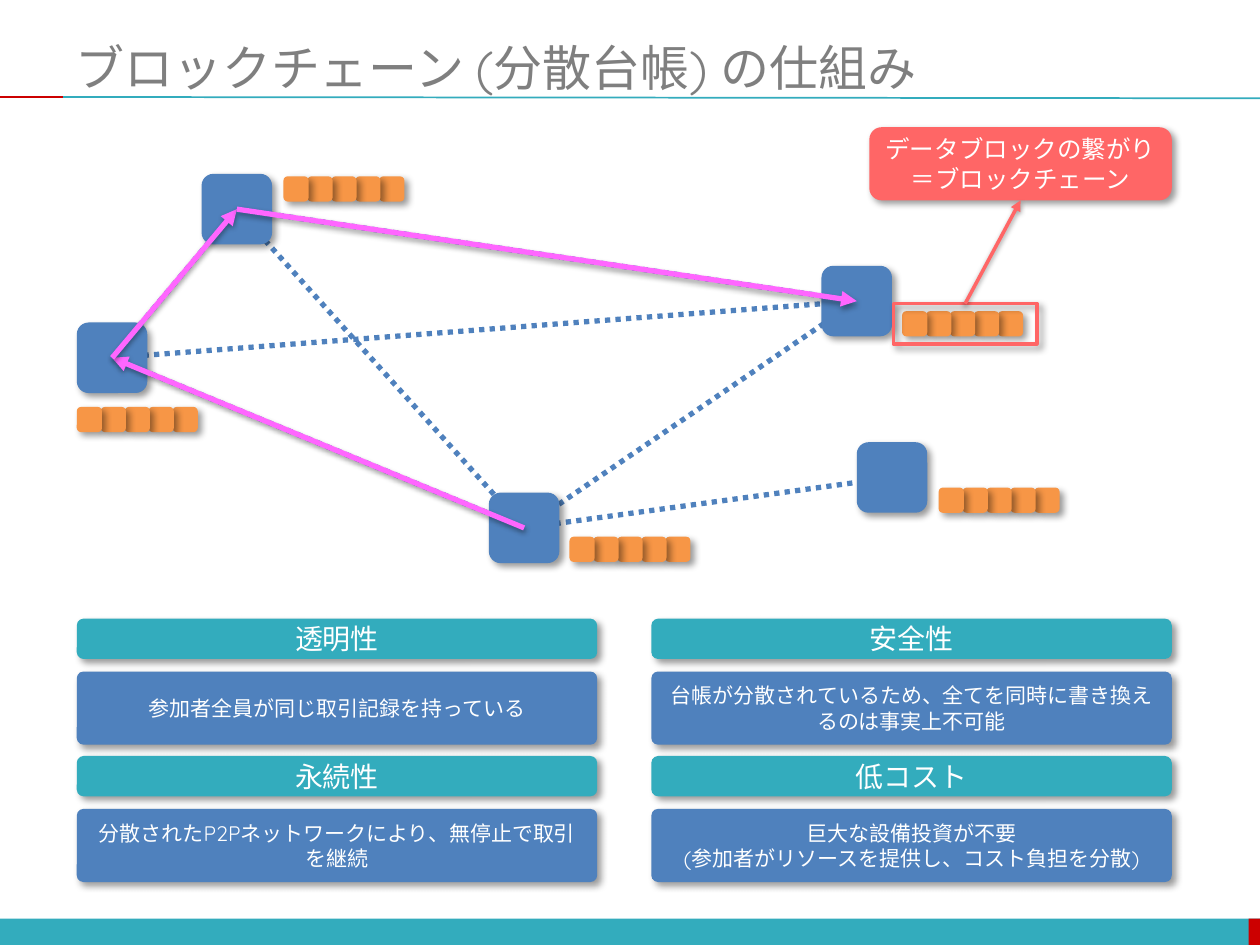
from lxml import etree
from pptx import Presentation
from pptx import util as u
from pptx.dml.color import RGBColor
from pptx.enum import dml, shapes, text
from pptx.oxml import ns

TEAL = RGBColor(0x33, 0xAC, 0xBD)
RED = RGBColor(0xCC, 0x00, 0x00)
BLUE = RGBColor(0x4F, 0x81, 0xBD)
ORANGE = RGBColor(0xF7, 0x96, 0x46)
PINK = RGBColor(0xFF, 0x66, 0xFF)
CORAL = RGBColor(0xFF, 0x66, 0x66)
GREY = RGBColor(0x7F, 0x7F, 0x7F)
WHITE = RGBColor(0xFF, 0xFF, 0xFF)

FONT = "Quicksand"
WIDTH, HEIGHT = 10, 7.5
NODE = 0.56
BLOCK, BLOCK_STEP, BLOCKS = 0.2, 0.19, 5
BOX_SHADOW = (40, 4, 3, 45)  # opacity %, blur pt, distance pt, angle
ARROW_SHADOW = (38, 3.1, 1.6, 90)

# Top-left corner of each node and of its chain of blocks
NODES = {
    "top": ((1.6, 1.38), (2.25, 1.4)),
    "left": ((0.61, 2.56), (0.61, 3.23)),
    "bottom": ((3.88, 3.91), (4.52, 4.26)),
    "right": ((6.52, 2.11), (7.16, 2.47)),
    "far": ((6.8, 3.51), (7.45, 3.87)),
}
LINKS = [("top", "right"), ("top", "left"), ("top", "bottom"), ("left", "bottom"),
         ("left", "right"), ("bottom", "right"), ("bottom", "far")]
ROUTE = ["bottom", "left", "top", "right"]

# Benefit cards, two columns by two rows
CARD_X, CARD_Y, CARD_W = 0.61, 4.91, 4.13
COLUMN_STEP, ROW_STEP = 4.56, 1.09
HEADER_H, BODY_TOP, BODY_H = 0.32, 0.42, 0.58
BENEFITS = [
    [("透明性", "参加者全員が同じ取引記録を持っている"),
     ("安全性", "台帳が分散されているため、全てを同時に書き換えるのは事実上不可能")],
    [("永続性", "分散されたP2Pネットワークにより、無停止で取引を継続"),
     ("低コスト", "巨大な設備投資が不要\n(参加者がリソースを提供し、コスト負担を分散)")],
]


def set_shadow(shape, shadow=None):
    """Give an explicit effect list, empty when there is no shadow."""
    effects = etree.SubElement(shape._element.spPr, ns.qn("a:effectLst"))
    if shadow:
        opacity, blur, distance, angle = shadow
        outer = etree.SubElement(
            effects, ns.qn("a:outerShdw"), blurRad=str(u.Pt(blur)),
            dist=str(u.Pt(distance)), dir=str(angle * 60000), rotWithShape="0")
        color = etree.SubElement(outer, ns.qn("a:srgbClr"), val="000000")
        etree.SubElement(color, ns.qn("a:alpha"), val=str(opacity * 1000))


def write(shape, words, size, color, align):
    frame = shape.text_frame
    frame.text = words
    frame.word_wrap = True
    frame.vertical_anchor = text.MSO_ANCHOR.MIDDLE
    for paragraph in frame.paragraphs:
        paragraph.alignment = align
        for run in paragraph.runs:
            run.font.size = u.Pt(size)
            run.font.name = FONT
            run.font.color.rgb = color


def add_box(slide, left, top, width, height, fill=None, outline=None,
            rounded=True, corner=None, shadow=BOX_SHADOW, words=None, size=None):
    kind = shapes.MSO_SHAPE.ROUNDED_RECTANGLE if rounded else shapes.MSO_SHAPE.RECTANGLE
    box = slide.shapes.add_shape(kind, *map(u.Inches, (left, top, width, height)))
    if corner is not None:
        box.adjustments[0] = corner
    if fill is not None:
        box.fill.solid()
        box.fill.fore_color.rgb = fill
    else:
        box.fill.background()
    if outline is not None:
        box.line.color.rgb = outline
        box.line.width = u.Pt(2)
    else:
        box.line.fill.background()
    set_shadow(box, shadow)
    if words:
        write(box, words, size, WHITE, text.PP_ALIGN.CENTER)
    return box


def add_line(slide, start, end, color, width, dotted=False, arrow=False):
    line = slide.shapes.add_connector(
        shapes.MSO_CONNECTOR.STRAIGHT, *map(u.Inches, (*start, *end)))
    line.line.color.rgb = color
    line.line.width = u.Pt(width)
    if dotted:
        line.line.dash_style = dml.MSO_LINE.ROUND_DOT
    if arrow:
        etree.SubElement(line.line._get_or_add_ln(), ns.qn("a:tailEnd"), type="triangle")
    set_shadow(line, ARROW_SHADOW if arrow else None)
    return line


def node_center(name):
    left, top = NODES[name][0]
    return left + NODE / 2, top + NODE / 2


def add_chain(slide, left, top):
    # From right to left, so each block overlaps the next one
    for i in reversed(range(BLOCKS)):
        add_box(slide, left + i * BLOCK_STEP, top, BLOCK, BLOCK, ORANGE)


def add_frame(slide):
    add_box(slide, 0, 7.29, WIDTH, 0.22, TEAL, rounded=False, shadow=None)
    add_box(slide, 9.91, 7.29, 0.1, 0.22, RED, rounded=False, shadow=None)
    add_line(slide, (0.5, 0.77), (WIDTH, 0.78), TEAL, 1)
    add_line(slide, (0, 0.77), (0.5, 0.77), RED, 1)
    title = slide.shapes.add_textbox(*map(u.Inches, (0.5, 0.3, 9.5, 0.46)))
    write(title, "ブロックチェーン (分散台帳) の仕組み", 28, GREY, text.PP_ALIGN.LEFT)


def add_network(slide):
    for first, second in LINKS:
        add_line(slide, node_center(first), node_center(second), BLUE, 3, dotted=True)
    for node, chain in NODES.values():
        add_box(slide, *node, NODE, NODE, BLUE)
        add_chain(slide, *chain)
    for first, second in zip(ROUTE, ROUTE[1:]):
        add_line(slide, node_center(first), node_center(second), PINK, 3, arrow=True)


def add_callout(slide):
    callout = add_box(slide, 6.9, 1.01, 2.4, 0.58, CORAL,
                      words="データブロックの繋がり\n＝ブロックチェーン", size=14)
    chain_frame = add_box(slide, 7.09, 2.41, 1.14, 0.32, outline=CORAL, rounded=False)
    pointer = add_line(slide, (7.66, 2.41), (8.1, 1.59), CORAL, 2, arrow=True)
    pointer.begin_connect(chain_frame, 0)
    pointer.end_connect(callout, 2)


def add_benefits(slide):
    for row, cards in enumerate(BENEFITS):
        for column, (heading, body) in enumerate(cards):
            left = CARD_X + column * COLUMN_STEP
            top = CARD_Y + row * ROW_STEP
            add_box(slide, left, top, CARD_W, HEADER_H, TEAL, words=heading, size=16)
            add_box(slide, left, top + BODY_TOP, CARD_W, BODY_H, BLUE,
                    corner=0.09, words=body, size=12)


def main():
    deck = Presentation()
    deck.slide_width, deck.slide_height = u.Inches(WIDTH), u.Inches(HEIGHT)
    slide = deck.slides.add_slide(deck.slide_layouts[6])
    add_frame(slide)
    add_network(slide)
    add_callout(slide)
    add_benefits(slide)
    deck.save("out.pptx")


if __name__ == "__main__":
    main()
